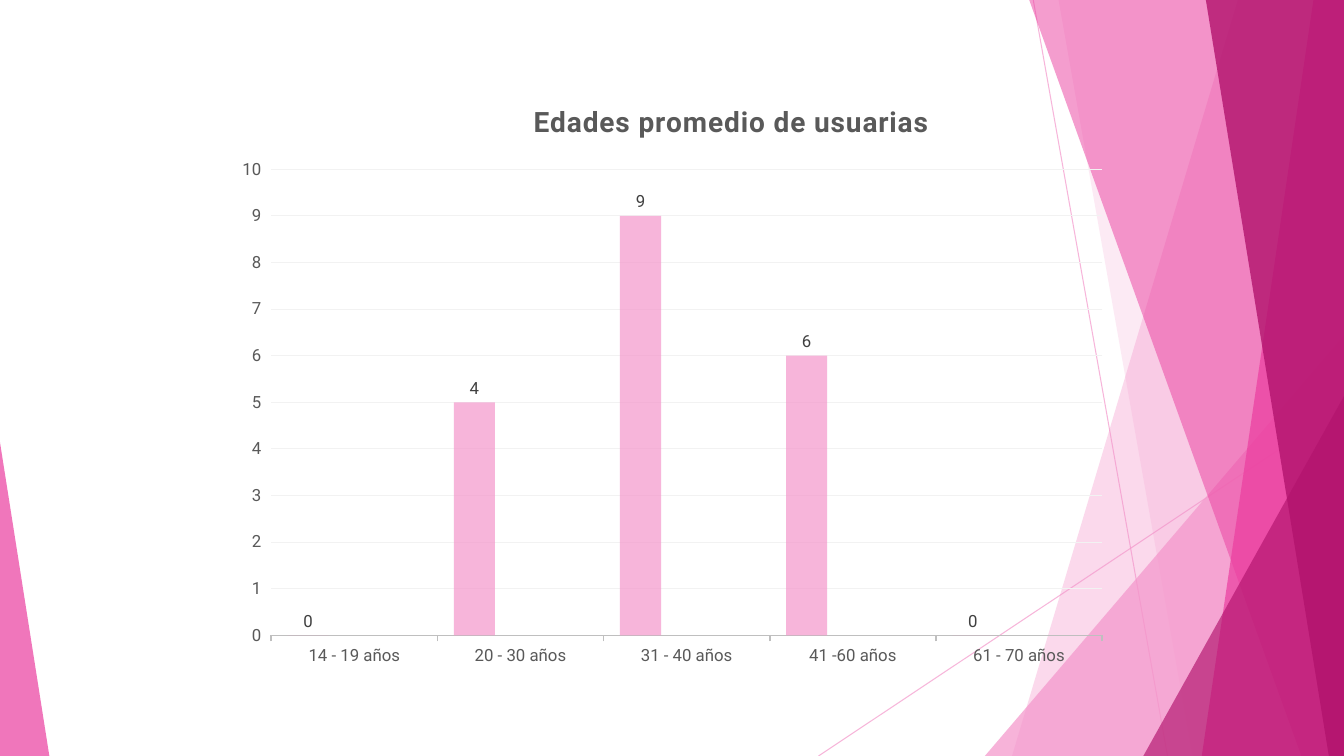
from dataclasses import dataclass

from lxml.etree import SubElement
from pptx import Presentation
from pptx.chart.data import CategoryChartData
from pptx.dml.color import RGBColor
from pptx.enum.chart import XL_CHART_TYPE as ChartType
from pptx.enum.chart import XL_LABEL_POSITION as LabelPosition
from pptx.enum.chart import XL_TICK_MARK as TickMark
from pptx.enum.shapes import MSO_CONNECTOR as Connector
from pptx.enum.shapes import MSO_SHAPE as Shape
from pptx.oxml import parse_xml
from pptx.oxml.ns import nsdecls, qn
from pptx.util import Inches, Pt

WIDTH, HEIGHT = Inches(13.33), Inches(7.5)
FONT = "Roboto"
COLORS = {
    "light": "F496CB", "pink": "EB3D9F", "dark": "B2136D",
    "orange": "E65331", "yellow": "F2AC19", "magenta": "D61682",
    "text": "595959", "label": "404040", "axis": "BFBFBF", "grid": "F2F2F2",
}


# All positions are percentages of the slide's width and height.
@dataclass(frozen=True)
class Ray:
    x1: float
    y1: float
    x2: float
    y2: float


@dataclass(frozen=True)
class Band:
    """Facet from a slanted left side to the right edge of the slide."""
    top_x: float
    bottom_x: float
    color: str
    opacity: int


@dataclass(frozen=True)
class Corner:
    """Right triangle standing on the bottom edge of the slide."""
    left: float
    top: float
    width: float
    apex: int
    color: str
    opacity: int


@dataclass(frozen=True)
class AgeSeries:
    name: str
    values: tuple
    color: str


RAYS = [Ray(76.88, 0, 86.87, 100), Ray(100, 53.73, 60.9, 100)]
FACETS = [
    Band(92.1, 75.3, "light", 36),
    Band(78.76, 88.73, "light", 20),
    Corner(73.28, 44.4, 26.72, 1, "light", 72),
    Band(76.58, 96.83, "pink", 50),
    Band(97.73, 89.42, "pink", 70),
    Band(89.72, 98.87, "dark", 80),
    Corner(85.07, 52.4, 14.93, 1, "dark", 66),
    Corner(0, 58.53, 3.67, 0, "pink", 70),
]
AGES = ["14 - 19 años", "20 - 30 años", "31 - 40 años", "41 -60 años", "61 - 70 años"]
EMPTY = (None,) * len(AGES)
SERIES = [
    AgeSeries("Series 1", (0, 5, 9, 6, 0), "light"),
    AgeSeries("Series 2", EMPTY, "orange"),
    AgeSeries("Series 3", EMPTY, "yellow"),
    AgeSeries("Series 4", EMPTY, "magenta"),
]


def across(percent: float) -> int:
    return round(WIDTH * percent / 100)


def down(percent: float) -> int:
    return round(HEIGHT * percent / 100)


def rgb(name: str) -> RGBColor:
    return RGBColor.from_string(COLORS[name])


def set_opacity(element, percent: int) -> None:
    for color in element.iter(qn("a:srgbClr")):
        SubElement(color, qn("a:alpha")).set("val", str(percent * 1000))


def paint(facet, color: str, opacity: int) -> None:
    facet.shadow.inherit = False
    facet.fill.solid()
    facet.fill.fore_color.rgb = rgb(color)
    facet.line.fill.background()
    set_opacity(facet._element, opacity)


def style_font(font, size: float, color: str, bold: bool = False) -> None:
    font.name, font.size, font.bold = FONT, Pt(size), bold
    font.color.rgb = rgb(color)


def write_text(frame, text: str, *, size: float, color: str,
               bold: bool = False, spacing: int = 0) -> None:
    run = frame.paragraphs[0].add_run()
    run.text = text
    style_font(run.font, size, color, bold)
    if spacing:
        run._r.get_or_add_rPr().set("spc", str(spacing))


def draw_ray(shapes, ray: Ray) -> None:
    line = shapes.add_connector(Connector.STRAIGHT, across(ray.x1), down(ray.y1),
                                across(ray.x2), down(ray.y2))
    line.line.width = Pt(0.75)
    line.line.color.rgb = rgb("light")
    set_opacity(line._element, 70)
    SubElement(line._element.spPr, qn("a:effectLst"))


def draw_band(shapes, band: Band) -> None:
    outline = shapes.build_freeform(across(band.top_x), 0)
    outline.add_line_segments([(WIDTH, 0), (WIDTH, HEIGHT),
                               (across(band.bottom_x), HEIGHT)], close=True)
    paint(outline.convert_to_shape(), band.color, band.opacity)


def draw_corner(shapes, corner: Corner) -> None:
    triangle = shapes.add_shape(Shape.ISOSCELES_TRIANGLE, across(corner.left), down(corner.top),
                                across(corner.width), down(100 - corner.top))
    triangle.adjustments[0] = corner.apex
    paint(triangle, corner.color, corner.opacity)


def place(element, index: int, target: str = "", **shares: float) -> None:
    """Give a chart part a manual layout in shares of the chart's size."""
    for old in element.findall(qn("c:layout")):
        element.remove(old)
    inner = f'<c:layoutTarget val="{target}"/>' if target else ""
    modes = '<c:xMode val="edge"/><c:yMode val="edge"/>'
    sizes = "".join(f'<c:{key} val="{value}"/>' for key, value in shares.items())
    element.insert(index, parse_xml(
        f'<c:layout {nsdecls("c")}><c:manualLayout>{inner}{modes}{sizes}'
        "</c:manualLayout></c:layout>"))


def draw_ages_chart(shapes) -> None:
    data = CategoryChartData()
    data.categories = AGES
    for entry in SERIES:
        data.add_series(entry.name, entry.values)
    chart = shapes.add_chart(ChartType.COLUMN_CLUSTERED, across(16.65), down(10.53),
                             across(66.69), down(79.07), data).chart
    chart.has_legend = False
    style_font(chart.font, 12, "text")

    # Title
    write_text(chart.chart_title.text_frame, "Edades promedio de usuarias",
               size=20, color="text", bold=True, spacing=50)
    place(chart.chart_title._element, 1, x=0.34, y=0.03)

    # Columns and their labels
    plot = chart.plots[0]
    plot.gap_width, plot.overlap, plot.vary_by_categories = 80, 25, False
    place(plot._element.getparent(), 0, "inner", x=0.053, y=0.15, w=0.927, h=0.78)
    for series, entry in zip(plot.series, SERIES):
        series.format.fill.solid()
        series.format.fill.fore_color.rgb = rgb(entry.color)
        set_opacity(series._element, 70)
        labels = series.data_labels
        labels.show_value = True
        labels.position = LabelPosition.OUTSIDE_END
        style_font(labels.font, 12, "label")
    relabelled = plot.series[0].points[1].data_label
    write_text(relabelled.text_frame, "4", size=12, color="label")
    relabelled.position = LabelPosition.OUTSIDE_END

    # Axes
    ages, count = chart.category_axis, chart.value_axis
    for axis in (ages, count):
        axis.major_tick_mark, axis.minor_tick_mark = TickMark.OUTSIDE, TickMark.NONE
        style_font(axis.tick_labels.font, 12, "text")
    ages.format.line.width = Pt(1.25)
    ages.format.line.color.rgb = rgb("axis")
    count.format.line.fill.background()
    count.minimum_scale, count.maximum_scale, count.major_unit = 0, 10, 1
    count.major_gridlines.format.line.width = Pt(0.75)
    count.major_gridlines.format.line.color.rgb = rgb("grid")


def main() -> None:
    deck = Presentation()
    deck.slide_width, deck.slide_height = WIDTH, HEIGHT
    shapes = deck.slides.add_slide(deck.slide_layouts[6]).shapes

    # Faceted background
    for ray in RAYS:
        draw_ray(shapes, ray)
    for facet in FACETS:
        if isinstance(facet, Band):
            draw_band(shapes, facet)
        else:
            draw_corner(shapes, facet)

    draw_ages_chart(shapes)
    deck.save("out.pptx")


if __name__ == "__main__":
    main()
